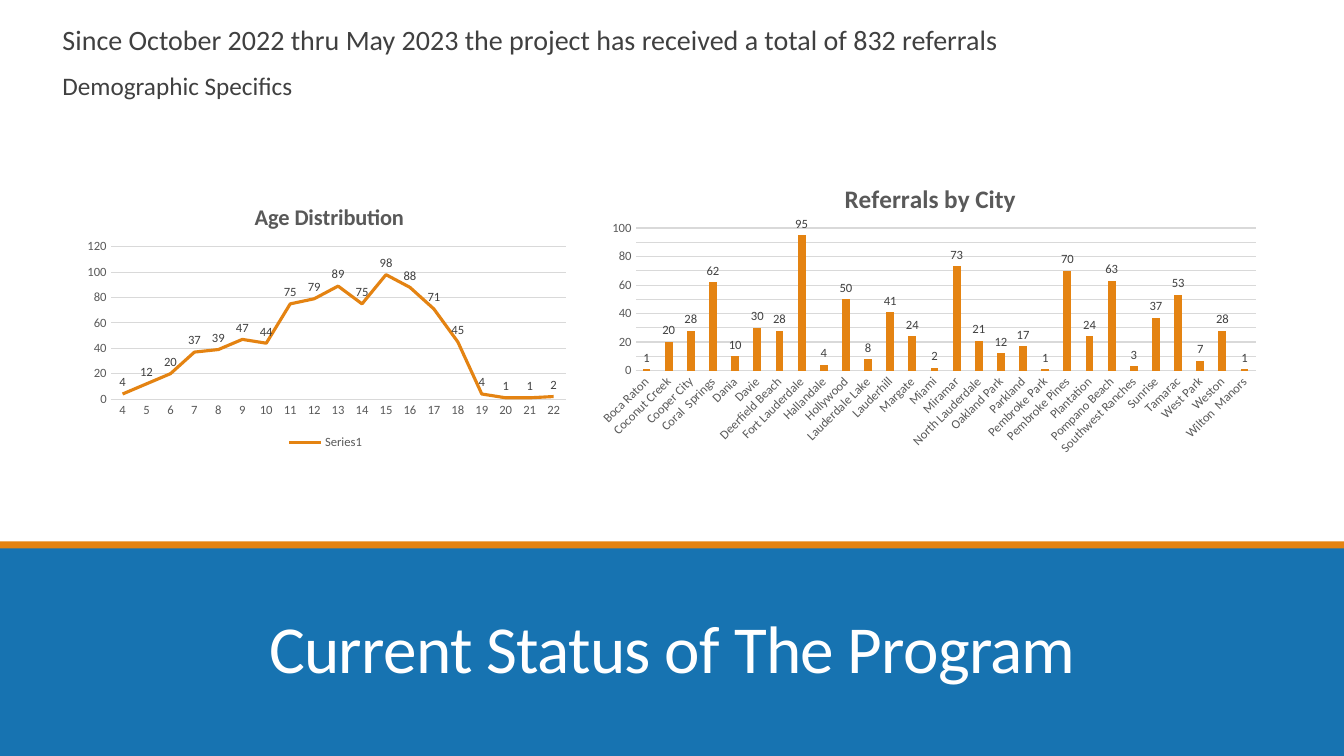
import pptx
import pptx.chart.data
import pptx.dml.color
import pptx.enum.chart
import pptx.enum.shapes
import pptx.enum.text
import pptx.oxml
import pptx.oxml.ns
import pptx.util

Inches = pptx.util.Inches
Pt = pptx.util.Pt
FONT = "Calibri"
COLORS = {
    "blue": "1773B1", "orange": "E48312", "white": "FFFFFF",
    "body": "404040", "axis": "595959", "grid": "D9D9D9",
}
AGES = dict(zip(range(4, 23), [
    4, 12, 20, 37, 39, 47, 44, 75, 79, 89, 75, 98, 88, 71, 45, 4, 1, 1, 2]))
CITIES = {
    "Boca Raton": 1, "Coconut Creek": 20, "Cooper City": 28, "Coral  Springs": 62,
    "Dania": 10, "Davie": 30, "Deerfield Beach": 28, "Fort Lauderdale": 95,
    "Hallandale": 4, "Hollywood": 50, "Lauderdale Lake": 8, "Lauderhill": 41,
    "Margate": 24, "Miami": 2, "Miramar": 73, "North Lauderdale": 21,
    "Oakland Park": 12, "Parkland": 17, "Pembroke Park": 1, "Pembroke Pines": 70,
    "Plantation": 24, "Pompano Beach": 63, "Southwest Ranches": 3, "Sunrise": 37,
    "Tamarac": 53, "West Park": 7, "Weston": 28, "Wilton  Manors": 1,
}


def rgb(name):
    """Return the named colour."""
    return pptx.dml.color.RGBColor.from_string(COLORS[name])


def style_font(font, size, color, bold=False):
    """Give a font its face, size, colour and weight."""
    font.name, font.size, font.bold = FONT, Pt(size), bold
    font.color.rgb = rgb(color)


def add_band(slide, left, top, width, height, color):
    """Add a plain filled band."""
    band = slide.shapes.add_shape(
        pptx.enum.shapes.MSO_SHAPE.RECTANGLE,
        Inches(left), Inches(top), Inches(width), Inches(height))
    band.shadow.inherit = False
    band.fill.solid()
    band.fill.fore_color.rgb = rgb(color)
    band.line.fill.background()


def add_footer(slide, left, top, width, height):
    """Add the blue band with its orange edge and the slide title."""
    add_band(slide, left, top + 0.05, width, height - 0.05, "blue")
    add_band(slide, left, top, width, 0.07, "orange")
    heading = slide.shapes.add_textbox(
        Inches(left + 1.17), Inches(top + 0.37), Inches(11), Inches(1.13)).text_frame
    heading.word_wrap = True
    heading.vertical_anchor = pptx.enum.text.MSO_ANCHOR.BOTTOM
    heading.text = "Current Status of The Program"
    line = heading.paragraphs[0]
    line.alignment = pptx.enum.text.PP_ALIGN.CENTER
    line.line_spacing = 0.85
    style_font(line.runs[0].font, 48, "white")
    line.runs[0].font._element.set("spc", "-50")


def add_summary(slide, left, top, width, height):
    """Add the two lines above the charts."""
    summary = slide.shapes.add_textbox(
        Inches(left), Inches(top), Inches(width), Inches(height)).text_frame
    summary.word_wrap = True
    summary.margin_left = summary.margin_right = 0
    summary.text = ("Since October 2022 thru May 2023 the project has received "
                    "a total of 832 referrals\nDemographic Specifics")
    for line, size, before in zip(summary.paragraphs, (20, 18), (0, 10.7)):
        line._p.get_or_add_pPr().set("marL", str(Inches(0.09)))
        line.line_spacing = 0.9
        line.space_before, line.space_after = Pt(before), Pt(1.8)
        style_font(line.runs[0].font, size, "body")


def place_part(part, index, **fractions):
    """Fix a chart part at fractions of the chart's size."""
    for old in part.findall(pptx.oxml.ns.qn("c:layout")):
        part.remove(old)
    target = '<c:layoutTarget val="inner"/>' if "w" in fractions else ""
    modes = '<c:xMode val="edge"/><c:yMode val="edge"/>'
    sizes = "".join(f'<c:{key} val="{value}"/>' for key, value in fractions.items())
    part.insert(index, pptx.oxml.parse_xml(
        f'<c:layout {pptx.oxml.ns.nsdecls("c")}><c:manualLayout>'
        f"{target}{modes}{sizes}</c:manualLayout></c:layout>"))


def add_counts_chart(slide, box, kind, name, counts, title, title_size,
                     title_at, plot_box, top_value, step, label_position):
    """Add a one-series chart with title, axes and value labels in the box."""
    data = pptx.chart.data.CategoryChartData()
    data.categories = [str(label) for label in counts]
    data.add_series(name, list(counts.values()))
    chart = slide.shapes.add_chart(kind, *map(Inches, box), data).chart
    chart.font.name, chart.font.size = FONT, Pt(10)
    chart.has_legend = False

    chart.has_title = True
    chart.chart_title.text_frame.text = title
    title_run = chart.chart_title.text_frame.paragraphs[0].runs[0]
    style_font(title_run.font, title_size, "axis", True)
    place_part(chart.chart_title._element, 1, **dict(zip("xy", title_at)))
    place_part(chart._chartSpace.chart.plotArea, 0, **dict(zip("xywh", plot_box)))

    values = chart.value_axis
    values.minimum_scale, values.maximum_scale, values.major_unit = 0, top_value, step
    values.format.line.fill.background()
    for axis in (chart.category_axis, values):
        axis.major_tick_mark = axis.minor_tick_mark = pptx.enum.chart.XL_TICK_MARK.NONE
        style_font(axis.tick_labels.font, 9, "axis")
    values.has_major_gridlines = True
    for rule in (chart.category_axis.format.line, values.major_gridlines.format.line):
        rule.color.rgb = rgb("grid")
        rule.width = Pt(0.75)

    plot = chart.plots[0]
    plot.vary_by_categories = False
    plot.has_data_labels = True
    plot.data_labels.show_value = True
    plot.data_labels.position = label_position
    style_font(plot.data_labels.font, 9, "body")
    return chart


def add_city_chart(slide, left, top, width, height):
    """Add the columns of referrals by city."""
    chart = add_counts_chart(
        slide, (left, top, width, height),
        pptx.enum.chart.XL_CHART_TYPE.COLUMN_CLUSTERED, "Series 1", CITIES,
        "Referrals by City", 18, (0.37, 0.06), (0.07, 0.23, 0.91, 0.47), 100, 10,
        pptx.enum.chart.XL_LABEL_POSITION.OUTSIDE_END)
    chart.plots[0].gap_width = 182
    columns = chart.plots[0].series[0].format.fill
    columns.solid()
    columns.fore_color.rgb = rgb("orange")
    chart.category_axis._element.txPr.bodyPr.set("rot", "-2700000")


def add_age_chart(slide, left, top, width, height):
    """Add the line of referrals by age."""
    chart = add_counts_chart(
        slide, (left, top, width, height),
        pptx.enum.chart.XL_CHART_TYPE.LINE, "Series1", AGES,
        "Age Distribution", 16, (0.35, 0.06), (0.07, 0.24, 0.91, 0.56), 120, 20,
        pptx.enum.chart.XL_LABEL_POSITION.ABOVE)
    ages = chart.plots[0].series[0]
    ages.smooth = False
    ages.marker.style = pptx.enum.chart.XL_MARKER_STYLE.NONE
    ages.format.line.color.rgb = rgb("orange")
    ages.format.line.width = Pt(2.25)
    chart.has_legend = True
    chart.legend.position = pptx.enum.chart.XL_LEGEND_POSITION.BOTTOM
    chart.legend.include_in_layout = False
    style_font(chart.legend.font, 9, "axis")


def main():
    """Build and save the slide."""
    deck = pptx.Presentation()
    deck.slide_width, deck.slide_height = Inches(13.33), Inches(7.5)
    slide = deck.slides.add_slide(deck.slide_layouts[6])
    add_footer(slide, 0, 5.37, 13.33, 2.13)
    add_summary(slide, 0.53, 0.21, 12.46, 0.95)
    add_city_chart(slide, 5.83, 1.57, 6.76, 3.01)
    add_age_chart(slide, 0.75, 1.8, 4.96, 2.7)
    deck.save("out.pptx")


if __name__ == "__main__":
    main()
